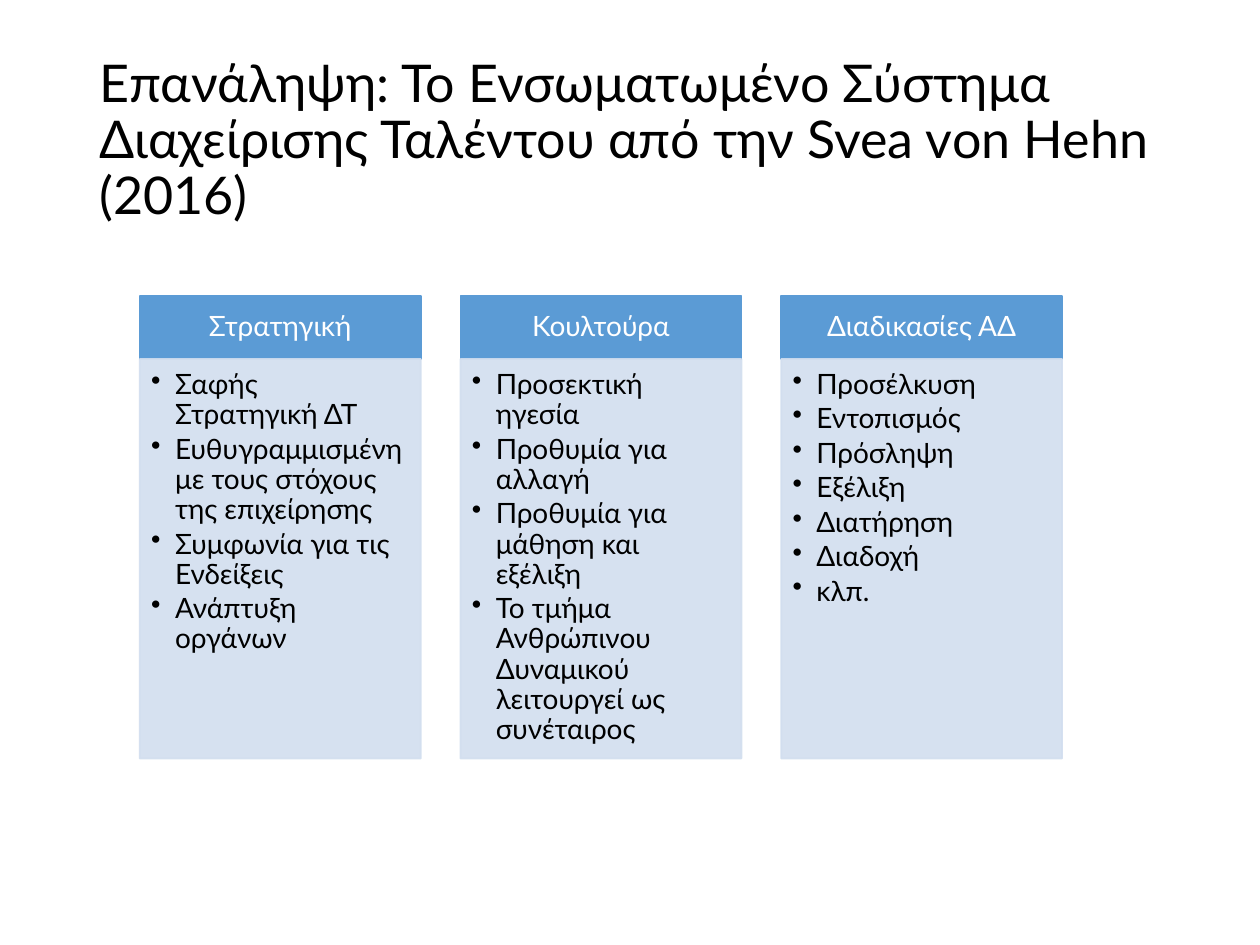
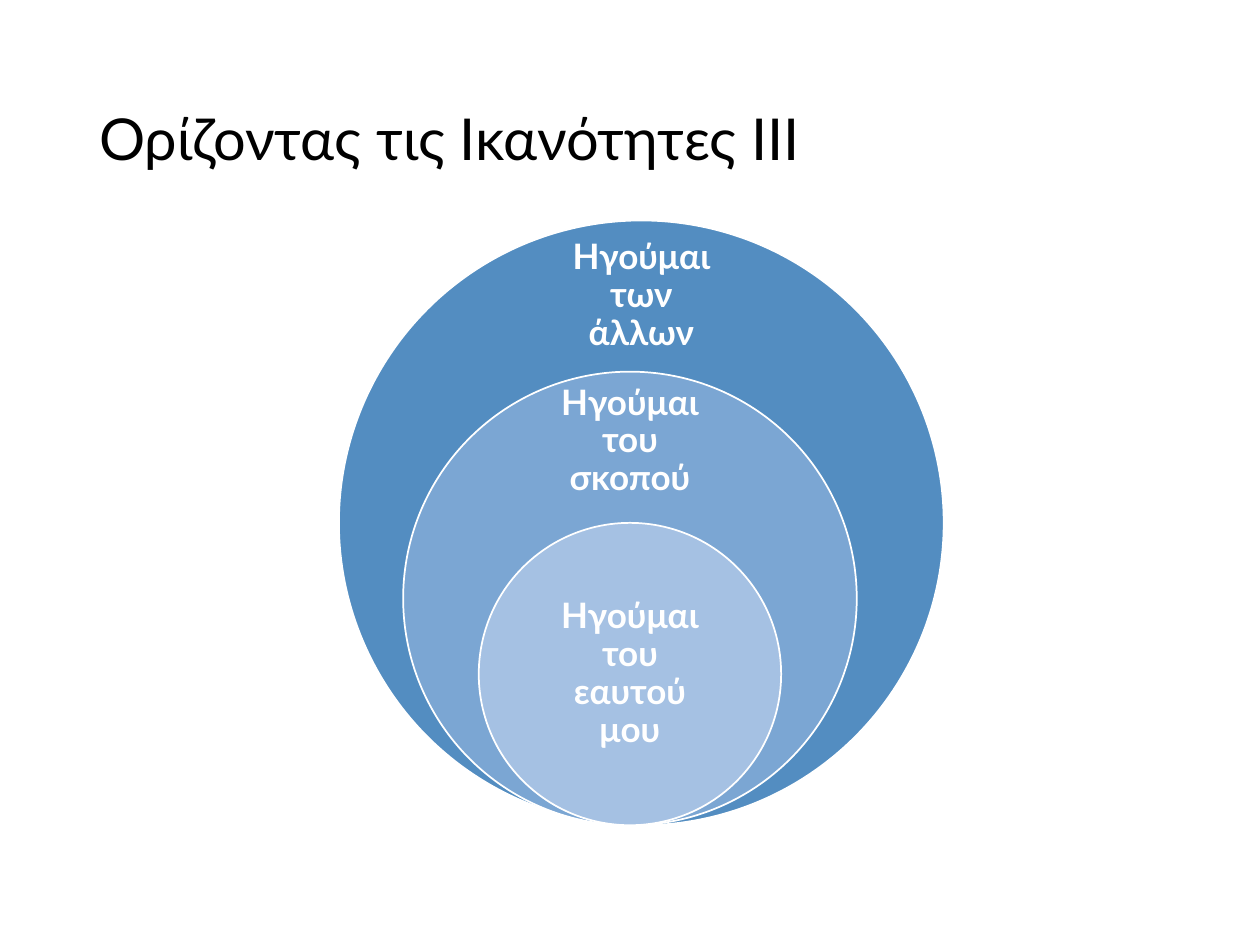
import dataclasses
import pptx
import pptx.util
import pptx.dml.color
import pptx.enum.shapes
import pptx.enum.text
import pptx.oxml.ns
import lxml.etree

Inches = pptx.util.Inches
Pt = pptx.util.Pt
Anchor = pptx.enum.text.MSO_ANCHOR
Align = pptx.enum.text.PP_ALIGN
Kind = pptx.enum.shapes.MSO_SHAPE


@dataclasses.dataclass(frozen=True)
class Theme:
    font: str = "Lato"
    ink: str = "000000"
    white: str = "FFFFFF"
    head: str = "5B9BD5"
    body: str = "D2DEEF"
    rings: tuple = ("538DC1", "7BA6D3", "A5C1E3")
    title: float = 33
    small: float = 29.7
    item: float = 16
    ring: float = 20


THEME = Theme()

PILLARS = [
    ("Στρατηγική", [
        "Σαφής Στρατηγική ΔΤ",
        "Ευθυγραμμισμένη με τους στόχους της επιχείρησης",
        "Συμφωνία για τις Ενδείξεις",
        "Ανάπτυξη οργάνων"]),
    ("Κουλτούρα", [
        "Προσεκτική ηγεσία",
        "Προθυμία για αλλαγή",
        "Προθυμία για μάθηση και εξέλιξη",
        "Το τμήμα Ανθρώπινου Δυναμικού λειτουργεί ως συνέταιρος"]),
    ("Διαδικασίες ΑΔ", [
        "Προσέλκυση", "Εντοπισμός", "Πρόσληψη", "Εξέλιξη",
        "Διατήρηση", "Διαδοχή", "κλπ."]),
]

RINGS = [
    ("Ηγούμαι των άλλων", 2.69, 4.8, (4.25, 1.99, 1.68, 0.72)),
    ("Ηγούμαι του σκοπού", 3.2, 3.6, (4.16, 3.17, 1.68, 0.67)),
    ("Ηγούμαι του εαυτού μου", 3.8, 2.4, (4.15, 4.75, 1.7, 1.2)),
]
BASE = 6.55


def color(code):
    return pptx.dml.color.RGBColor.from_string(code)


def add_bullet(para):
    props = para._p.get_or_add_pPr()
    props.set("marL", str(Inches(0.19)))
    props.set("indent", str(-Inches(0.19)))
    mark = lxml.etree.SubElement(props, pptx.oxml.ns.qn("a:buChar"))
    mark.set("char", "•")


def write(shape, lines, size, ink, insets, anchor=Anchor.MIDDLE,
          align=Align.CENTER, bold=False, bullet=False):
    frame = shape.text_frame
    frame.word_wrap = True
    frame.vertical_anchor = anchor
    (frame.margin_left, frame.margin_top, frame.margin_right,
     frame.margin_bottom) = map(Inches, insets)
    for index, line in enumerate(lines):
        para = frame.add_paragraph() if index else frame.paragraphs[0]
        para.text = line
        para.alignment = align
        para.line_spacing = 0.9
        if bullet:
            para.space_after = Pt(size * 0.15)
            add_bullet(para)
        para.font.name = THEME.font
        para.font.size = Pt(size)
        para.font.bold = bold
        para.font.color.rgb = color(ink)


def add_text(slide, box, line, size, ink, insets, **style):
    shape = slide.shapes.add_textbox(*map(Inches, box))
    write(shape, [line], size, ink, insets, **style)


def add_title(slide, line, size):
    add_text(slide, (0.69, 0.4, 8.62, 1.45), line, size, THEME.ink,
             (0.1, 0.05, 0.1, 0.05), align=Align.LEFT)


def add_form(slide, kind, box, fill, edge, alpha=None):
    shape = slide.shapes.add_shape(kind, *map(Inches, box))
    shape.shadow.inherit = False
    shape.fill.solid()
    shape.fill.fore_color.rgb = color(fill)
    shape.line.color.rgb = color(edge)
    shape.line.width = Pt(1)
    if alpha:
        tag = pptx.oxml.ns.qn("a:alpha")
        for tint in shape.element.spPr.iter(pptx.oxml.ns.qn("a:srgbClr")):
            lxml.etree.SubElement(tint, tag).set("val", str(alpha * 1000))
    return shape


def add_pillar(slide, left, head, items):
    top = add_form(slide, Kind.RECTANGLE, (left, 2.35, 2.23, 0.5),
                   THEME.head, THEME.head)
    write(top, [head], THEME.item, THEME.white, (0.12, 0.07, 0.12, 0.07))
    body = add_form(slide, Kind.RECTANGLE, (left, 2.85, 2.23, 3.17),
                    THEME.body, THEME.body, alpha=90)
    write(body, items, THEME.item, THEME.ink, (0.09, 0.09, 0.12, 0.14),
          anchor=Anchor.TOP, align=Align.LEFT, bullet=True)


def add_ring(slide, label, left, size, box, fill):
    add_form(slide, Kind.OVAL, (left, BASE - size, size, size),
             fill, THEME.white)
    add_text(slide, box, label, THEME.ring, THEME.white, (0.16,) * 4,
             bold=True)


def main():
    deck = pptx.Presentation()
    deck.slide_width = Inches(10)
    deck.slide_height = Inches(7.5)
    blank = deck.slide_layouts[6]

    slide = deck.slides.add_slide(blank)
    add_title(slide, "Επανάληψη: Το Ενσωματωμένο Σύστημα Διαχείρισης "
              "Ταλέντου από την Svea von Hehn (2016)", THEME.small)
    for index, (head, items) in enumerate(PILLARS):
        add_pillar(slide, 1.11 + index * 2.545, head, items)

    slide = deck.slides.add_slide(blank)
    add_title(slide, "Ορίζοντας τις Ικανότητες III", THEME.title)
    for ring, fill in zip(RINGS, THEME.rings):
        add_ring(slide, *ring, fill)

    deck.save("out.pptx")


if __name__ == "__main__":
    main()
